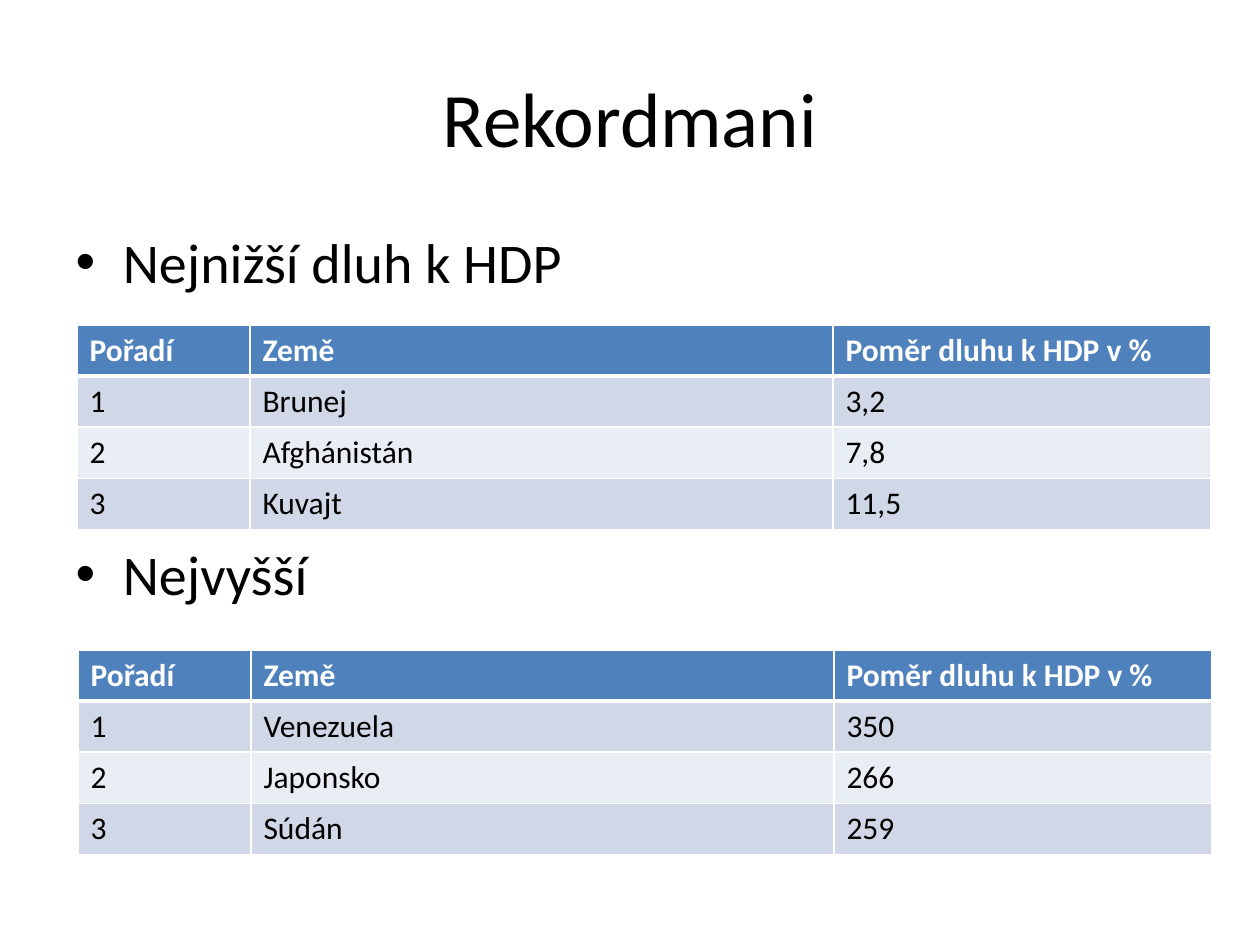
"""Build the slide listing the countries with the lowest and highest debt-to-GDP ratio."""
from dataclasses import dataclass

from lxml import etree
from pptx import Presentation
from pptx.dml.color import RGBColor
from pptx.enum.text import MSO_ANCHOR, MSO_AUTO_SIZE, PP_ALIGN
from pptx.oxml.ns import qn
from pptx.util import Emu, Pt

CENTER = PP_ALIGN.CENTER
MIDDLE = MSO_ANCHOR.MIDDLE
NO_AUTOFIT = MSO_AUTO_SIZE.NONE
PX_PER_INCH = 126


@dataclass(frozen=True)
class Theme:
    font: str = "Calibri"
    ink: str = "000000"
    white: str = "FFFFFF"
    header: str = "4F81BD"
    bands: tuple[str, str] = ("D0D8E8", "E9EDF4")
    title_pt: int = 44
    body_pt: int = 32
    cell_pt: int = 18
    rule_pt: int = 1
    header_rule_pt: int = 3
    section_gap_pt: int = 140


@dataclass(frozen=True)
class Ranking:
    heading: str
    left: int
    top: int
    entries: tuple[tuple[str, str], ...]


THEME = Theme()
COLUMNS = ("Pořadí", "Země", "Poměr dluhu k HDP v %")
COLUMN_WIDTHS = (173, 583, 378)
ROW_HEIGHT = 51
RANKINGS = (
    Ranking("Nejnižší dluh k HDP", 77, 325,
            (("Brunej", "3,2"), ("Afghánistán", "7,8"), ("Kuvajt", "11,5"))),
    Ranking("Nejvyšší", 78, 650,
            (("Venezuela", "350"), ("Japonsko", "266"), ("Súdán", "259"))),
)


def px(n: int) -> Emu:
    """Convert pixels to EMU."""
    return Emu(round(n * 914400 / PX_PER_INCH))


def place(sp, left: int, top: int, width: int, height: int) -> None:
    """Move and size a shape in pixels."""
    sp.left, sp.top, sp.width, sp.height = map(px, (left, top, width, height))


def style(p, size: int, color: str, bold: bool = False) -> None:
    """Set the font of a whole paragraph."""
    p.font.name = THEME.font
    p.font.size = Pt(size)
    p.font.bold = bold
    p.font.color.rgb = RGBColor.from_string(color)


def add_border(cell, side: str, width: int) -> None:
    """Draw one white edge of a table cell."""
    ln = etree.SubElement(cell._tc.get_or_add_tcPr(), qn(f"a:ln{side}"), w=str(Pt(width)))
    fill = etree.SubElement(ln, qn("a:solidFill"))
    etree.SubElement(fill, qn("a:srgbClr"), val=THEME.white)


def format_cell(cell, text: str, row: int) -> None:
    """Write a cell and format it as a header or a banded row."""
    is_header = row == 0
    edges = {"L": THEME.rule_pt, "R": THEME.rule_pt,
             "T": THEME.header_rule_pt if row == 1 else THEME.rule_pt,
             "B": THEME.header_rule_pt if is_header else THEME.rule_pt}
    for side, width in edges.items():
        add_border(cell, side, width)
    color = THEME.header if is_header else THEME.bands[(row - 1) % 2]
    cell.fill.solid()
    cell.fill.fore_color.rgb = RGBColor.from_string(color)
    cell.text = text
    style(cell.text_frame.paragraphs[0], THEME.cell_pt,
          THEME.white if is_header else THEME.ink, is_header)


def add_ranking(s, ranking: Ranking) -> None:
    """Add the table of one ranking."""
    rows = [COLUMNS]
    rows += [(str(n), *entry) for n, entry in enumerate(ranking.entries, 1)]
    table = s.shapes.add_table(
        len(rows), len(COLUMNS), px(ranking.left), px(ranking.top),
        px(sum(COLUMN_WIDTHS)), px(ROW_HEIGHT * len(rows))).table
    for column, width in zip(table.columns, COLUMN_WIDTHS):
        column.width = px(width)
    for i, row in enumerate(rows):
        table.rows[i].height = px(ROW_HEIGHT)
        for j, text in enumerate(row):
            format_cell(table.cell(i, j), text, i)


def fill_title(sp, text: str) -> None:
    """Place and write the slide title."""
    place(sp, 63, 38, 1134, 158)
    tf = sp.text_frame
    tf.text = text
    tf.vertical_anchor = MIDDLE
    tf.auto_size = NO_AUTOFIT
    p = tf.paragraphs[0]
    p.alignment = CENTER
    style(p, THEME.title_pt, THEME.ink)


def fill_body(sp, headings: list[str]) -> None:
    """Write the bulleted headings, leaving room for a table after each."""
    place(sp, 63, 221, 1134, 624)
    tf = sp.text_frame
    tf.text = "\n".join(headings)
    tf.auto_size = NO_AUTOFIT
    for p in tf.paragraphs:
        style(p, THEME.body_pt, THEME.ink)
    for p in tf.paragraphs[1:]:
        p.space_before = Pt(THEME.section_gap_pt)


def main() -> None:
    """Build and save the presentation."""
    prs = Presentation()
    prs.slide_width, prs.slide_height = px(1260), px(945)
    s = prs.slides.add_slide(prs.slide_layouts[1])
    fill_title(s.shapes.title, "Rekordmani")
    fill_body(s.placeholders[1], [ranking.heading for ranking in RANKINGS])
    for ranking in RANKINGS:
        add_ranking(s, ranking)
    prs.save("out.pptx")


if __name__ == "__main__":
    main()
